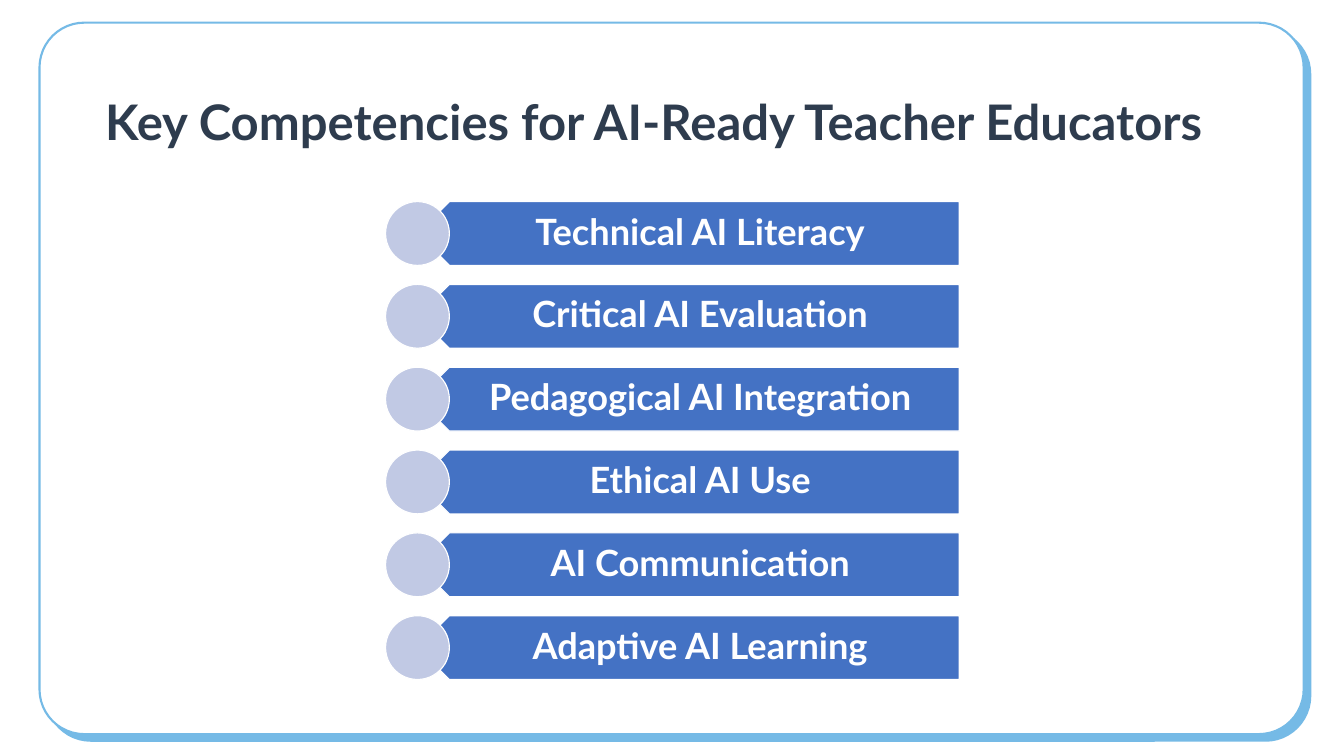
from lxml.etree import SubElement
from pptx import Presentation
from pptx.dml.color import RGBColor
from pptx.enum.shapes import MSO_SHAPE as Shape
from pptx.enum.text import MSO_ANCHOR as Anchor, PP_ALIGN as Align
from pptx.oxml.ns import qn
from pptx.util import Inches, Pt

TITLE = "Key Competencies for AI-Ready Teacher Educators"
COMPETENCIES = [
    "Technical AI Literacy",
    "Critical AI Evaluation",
    "Pedagogical AI Integration",
    "Ethical AI Use",
    "AI Communication",
    "Adaptive AI Learning",
]

FONT = "Lato"
WHITE = RGBColor(0xFF, 0xFF, 0xFF)
NAVY = RGBColor(0x2E, 0x3C, 0x4E)
SKY = RGBColor(0x75, 0xBA, 0xE6)
BLUE = RGBColor(0x44, 0x72, 0xC4)
LAVENDER = RGBColor(0xC1, 0xC9, 0xE4)

# Grid of the list, in inches
LIST_LEFT, LIST_TOP = 4.59, 2.4
ROW_HEIGHT, ROW_PITCH = 0.76, 0.986
BANNER_LEFT = LIST_LEFT + ROW_HEIGHT / 2
BANNER_WIDTH = 6.45
POINT_DEPTH = ROW_HEIGHT / 4
LABEL_INSETS = (0.33, 0.13, 0.24, 0.13)


def add_filled(slide, kind, box, fill, line, line_width):
    shape = slide.shapes.add_shape(kind, *map(Inches, box))
    shape.shadow.inherit = False
    shape.fill.solid()
    shape.fill.fore_color.rgb = fill
    shape.line.color.rgb = line
    shape.line.width = Pt(line_width)
    return shape


def add_offset_shadow(shape, color, distance, angle):
    """Give the shape a hard-edged shadow; distance in points, angle in degrees."""
    effects = shape._element.spPr.find(qn("a:effectLst"))
    shadow = SubElement(effects, qn("a:outerShdw"), blurRad="0",
                        dist=str(Pt(distance)), dir=str(angle * 60000),
                        algn="tl", rotWithShape="0")
    SubElement(shadow, qn("a:srgbClr"), val=str(color))


def add_text(slide, box, text, size, color, line_spacing,
             insets=(0, 0, 0, 0), wrap=True, align=Align.LEFT, anchor=Anchor.TOP):
    frame = slide.shapes.add_textbox(*map(Inches, box)).text_frame
    frame.word_wrap = wrap
    frame.vertical_anchor = anchor
    (frame.margin_left, frame.margin_top,
     frame.margin_right, frame.margin_bottom) = map(Inches, insets)
    paragraph = frame.paragraphs[0]
    paragraph.alignment = align
    paragraph.line_spacing = line_spacing
    run = paragraph.add_run()
    run.text = text
    run.font.name = FONT
    run.font.size = Pt(size)
    run.font.bold = True
    run.font.color.rgb = color


def add_competency(slide, row, label):
    top = LIST_TOP + row * ROW_PITCH
    banner = add_filled(slide, Shape.PENTAGON,
                        (BANNER_LEFT, top, BANNER_WIDTH, ROW_HEIGHT), BLUE, WHITE, 1)
    banner.rotation = 180
    label_box = (BANNER_LEFT + POINT_DEPTH, top, BANNER_WIDTH - POINT_DEPTH, ROW_HEIGHT)
    add_text(slide, label_box, label, 31, WHITE, 0.9, LABEL_INSETS,
             align=Align.CENTER, anchor=Anchor.MIDDLE)
    add_filled(slide, Shape.OVAL, (LIST_LEFT, top, ROW_HEIGHT, ROW_HEIGHT),
               LAVENDER, WHITE, 1)


def main():
    deck = Presentation()
    deck.slide_width, deck.slide_height = Inches(16), Inches(9)
    slide = deck.slides.add_slide(deck.slide_layouts[6])

    card = add_filled(slide, Shape.ROUNDED_RECTANGLE,
                      (0.47, 0.27, 15.05, 8.47), WHITE, SKY, 1.8)
    card.adjustments[0] = 0.063
    add_offset_shadow(card, SKY, 8, 45)

    add_text(slide, (1.25, 1.06, 13.21, 0.73), TITLE, 42, NAVY, Pt(52.5), wrap=False)
    for row, label in enumerate(COMPETENCIES):
        add_competency(slide, row, label)

    deck.save("out.pptx")


if __name__ == "__main__":
    main()
